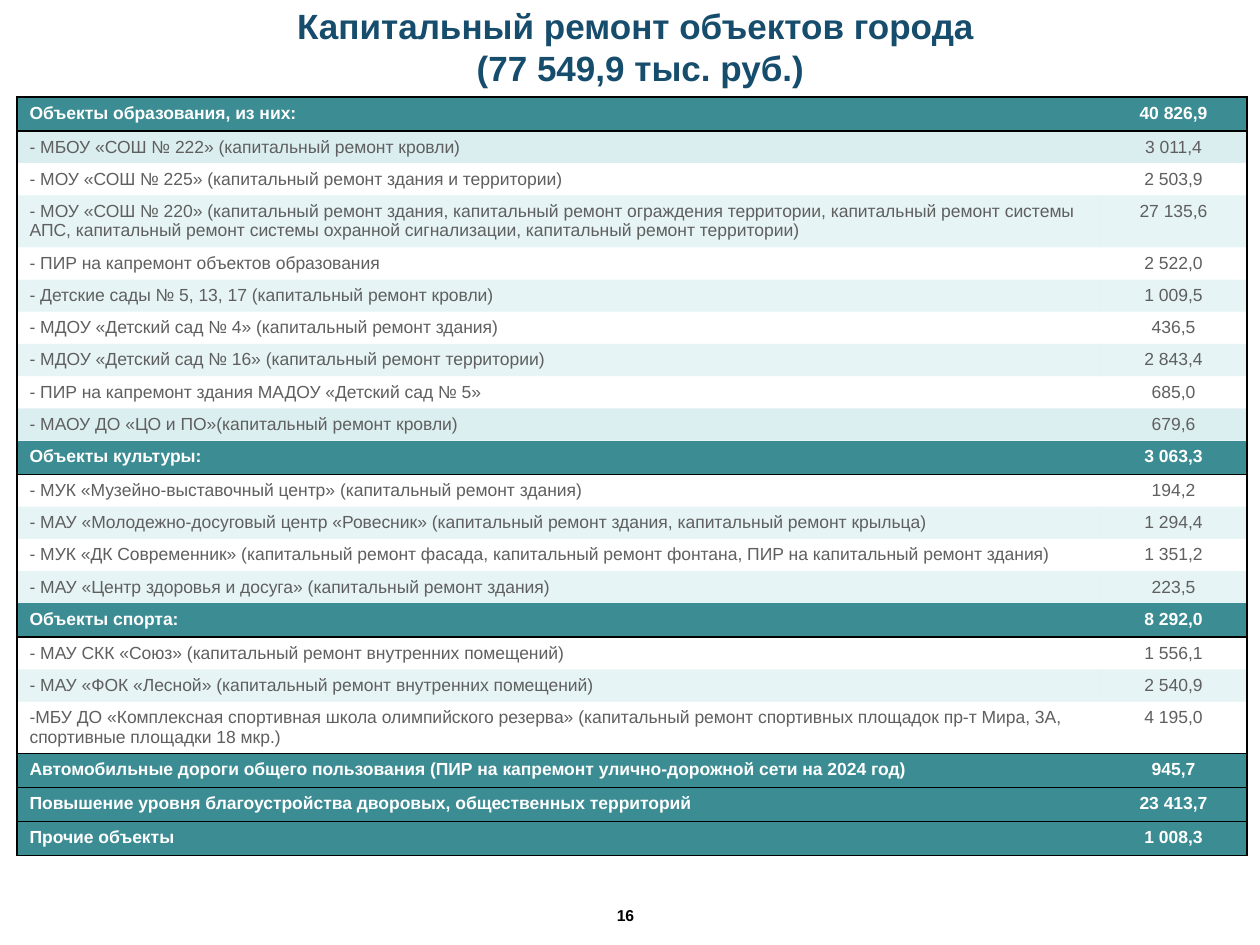
from lxml.etree import SubElement
from pptx import Presentation
from pptx.dml.color import RGBColor
from pptx.enum.text import MSO_ANCHOR as Anchor, PP_ALIGN as Align
from pptx.oxml.ns import qn
from pptx.util import Pt

PX = 914400 // 126
COLORS = {
    "title": "164C6C",
    "head": "3C8C93",
    "head_text": "FFFFFF",
    "text": "5F5F5F",
    "line": "000000",
    "first": "DAEDEF",
    "stripe": "84C9CE",
    "soft": "BBE0E3",
}
NO_STYLE = "{2D5ABB26-0587-4C30-8999-92F81FD0307C}"

# row kind: (fill, opacity in percent, horizontal borders)
KINDS = {
    "total": ("head", 100, "TB"),
    "head": ("head", 100, "B"),
    "first": ("first", 100, ""),
    "stripe": ("stripe", 20, ""),
    "soft": ("soft", 50, ""),
    "plain": (None, 100, ""),
    "last": (None, 100, "B"),
}
HEAD_HEIGHT, ITEM_HEIGHT, TALL_HEIGHT = 34, 32, 52
TWO_LINE_LENGTH = 120

ROWS = [
    ("total", "Объекты образования, из них:", "40 826,9"),
    ("first", "- МБОУ «СОШ № 222» (капитальный ремонт кровли)", "3 011,4"),
    ("plain", "- МОУ «СОШ № 225» (капитальный ремонт здания и территории)", "2 503,9"),
    ("stripe", "- МОУ «СОШ № 220» (капитальный ремонт здания, капитальный ремонт "
     "ограждения территории, капитальный ремонт системы АПС, капитальный ремонт "
     "системы охранной сигнализации, капитальный ремонт территории)", "27 135,6"),
    ("plain", "- ПИР на капремонт объектов образования", "2 522,0"),
    ("stripe", "- Детские сады № 5, 13, 17 (капитальный ремонт кровли)", "1 009,5"),
    ("plain", "- МДОУ «Детский сад № 4» (капитальный ремонт здания)", "436,5"),
    ("stripe", "- МДОУ «Детский сад № 16» (капитальный ремонт территории)", "2 843,4"),
    ("plain", "- ПИР на капремонт здания МАДОУ «Детский сад № 5»", "685,0"),
    ("soft", "- МАОУ ДО «ЦО и ПО»(капитальный ремонт кровли)", "679,6"),
    ("head", "Объекты культуры:", "3 063,3"),
    ("plain", "- МУК «Музейно-выставочный центр» (капитальный ремонт здания)", "194,2"),
    ("stripe", "- МАУ «Молодежно-досуговый центр «Ровесник» (капитальный ремонт "
     "здания, капитальный ремонт крыльца)", "1 294,4"),
    ("plain", "- МУК «ДК Современник» (капитальный ремонт фасада, капитальный "
     "ремонт фонтана, ПИР на капитальный ремонт здания)", "1 351,2"),
    ("stripe", "- МАУ «Центр здоровья и досуга» (капитальный ремонт здания)", "223,5"),
    ("head", "Объекты спорта:", "8 292,0"),
    ("plain", "- МАУ СКК «Союз» (капитальный ремонт внутренних помещений)", "1 556,1"),
    ("stripe", "- МАУ «ФОК «Лесной» (капитальный ремонт внутренних помещений)", "2 540,9"),
    ("last", "-МБУ ДО «Комплексная спортивная школа олимпийского резерва» "
     "(капитальный ремонт спортивных площадок пр-т Мира, 3А, спортивные "
     "площадки 18 мкр.)", "4 195,0"),
    ("total", "Автомобильные дороги общего пользования (ПИР на капремонт "
     "улично-дорожной сети на 2024 год)", "945,7"),
    ("total", "Повышение уровня благоустройства дворовых, общественных территорий",
     "23 413,7"),
    ("total", "Прочие объекты", "1 008,3"),
]


def write(frame, text, color, align=Align.LEFT, **font_format):
    frame.text = text
    paragraph = frame.paragraphs[0]
    paragraph.alignment = align
    for run in paragraph.runs:
        run.font.color.rgb = RGBColor.from_string(COLORS[color])
        for name, value in {"name": "Arial", **font_format}.items():
            setattr(run.font, name, value)


def add_border(cell, side):
    """Draw one side (L, R, T or B) of a cell as a thin line."""
    line = SubElement(cell._tc.get_or_add_tcPr(), qn(f"a:ln{side}"), w=str(Pt(1)))
    fill = SubElement(line, qn("a:solidFill"))
    SubElement(fill, qn("a:srgbClr"), val=COLORS["line"])


def fill_cell(cell, color, opacity):
    if color is None:
        cell.fill.background()
        return
    cell.fill.solid()
    cell.fill.fore_color.rgb = RGBColor.from_string(COLORS[color])
    if opacity < 100:
        solid = cell._tc.get_or_add_tcPr().find(qn("a:solidFill"))
        SubElement(solid[0], qn("a:alpha"), val=str(opacity * 1000))


def row_height(kind, label):
    if kind in ("total", "head"):
        return HEAD_HEIGHT
    return TALL_HEIGHT if len(label) > TWO_LINE_LENGTH else ITEM_HEIGHT


def add_title(slide, left, top, width, height):
    title = slide.shapes.title
    box = dict(left=left, top=top, width=width, height=height)
    for name, value in box.items():
        setattr(title, name, value * PX)
    title.text_frame.vertical_anchor = Anchor.MIDDLE
    write(title.text_frame, "Капитальный ремонт объектов города \v(77 549,9 тыс. руб.)",
          "title", Align.CENTER, size=Pt(20), bold=True)


def add_repairs_table(slide, left, top, width, value_width):
    heights = [row_height(kind, label) for kind, label, _ in ROWS]
    frame = slide.shapes.add_table(len(ROWS), 2, left * PX, top * PX,
                                   width * PX, sum(heights) * PX)
    table = frame.table
    table.first_row = table.horz_banding = False
    table._tbl.tblPr.find(qn("a:tableStyleId")).text = NO_STYLE
    table.columns[0].width = (width - value_width) * PX
    table.columns[1].width = value_width * PX
    columns = (("L", Align.LEFT), ("R", Align.CENTER))

    for row, height, (kind, *texts) in zip(table.rows, heights, ROWS):
        row.height = height * PX
        color, opacity, borders = KINDS[kind]
        is_head = color == "head"
        for cell, text, (side, align) in zip(row.cells, texts, columns):
            write(cell.text_frame, text, "head_text" if is_head else "text", align,
                  size=Pt(10), bold=is_head)
            for border in side + borders:
                add_border(cell, border)
            fill_cell(cell, color, opacity)


def add_page_number(slide, left, top, width, height):
    box = slide.shapes.add_textbox(left * PX, top * PX, width * PX, height * PX)
    box.text_frame.word_wrap = True
    box.text_frame.vertical_anchor = Anchor.MIDDLE
    write(box.text_frame, "16", "line", Align.CENTER, size=Pt(9), bold=True)


def main():
    presentation = Presentation()
    presentation.slide_width = 1260 * PX
    presentation.slide_height = 945 * PX
    slide = presentation.slides.add_slide(presentation.slide_layouts[5])
    add_title(slide, 21, 27, 1239, 39)
    add_repairs_table(slide, 17, 97, 1230, 147)
    add_page_number(slide, 591, 900, 69, 31)
    presentation.save("out.pptx")


if __name__ == "__main__":
    main()
